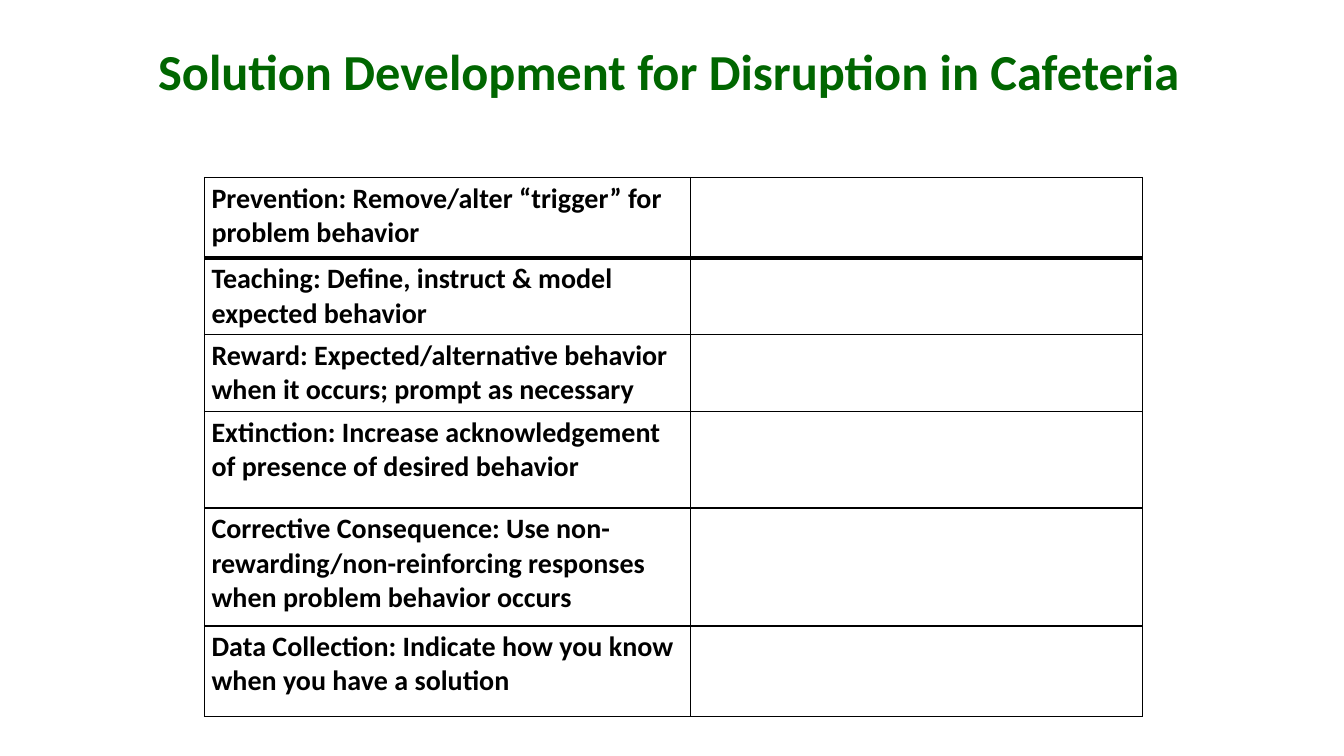
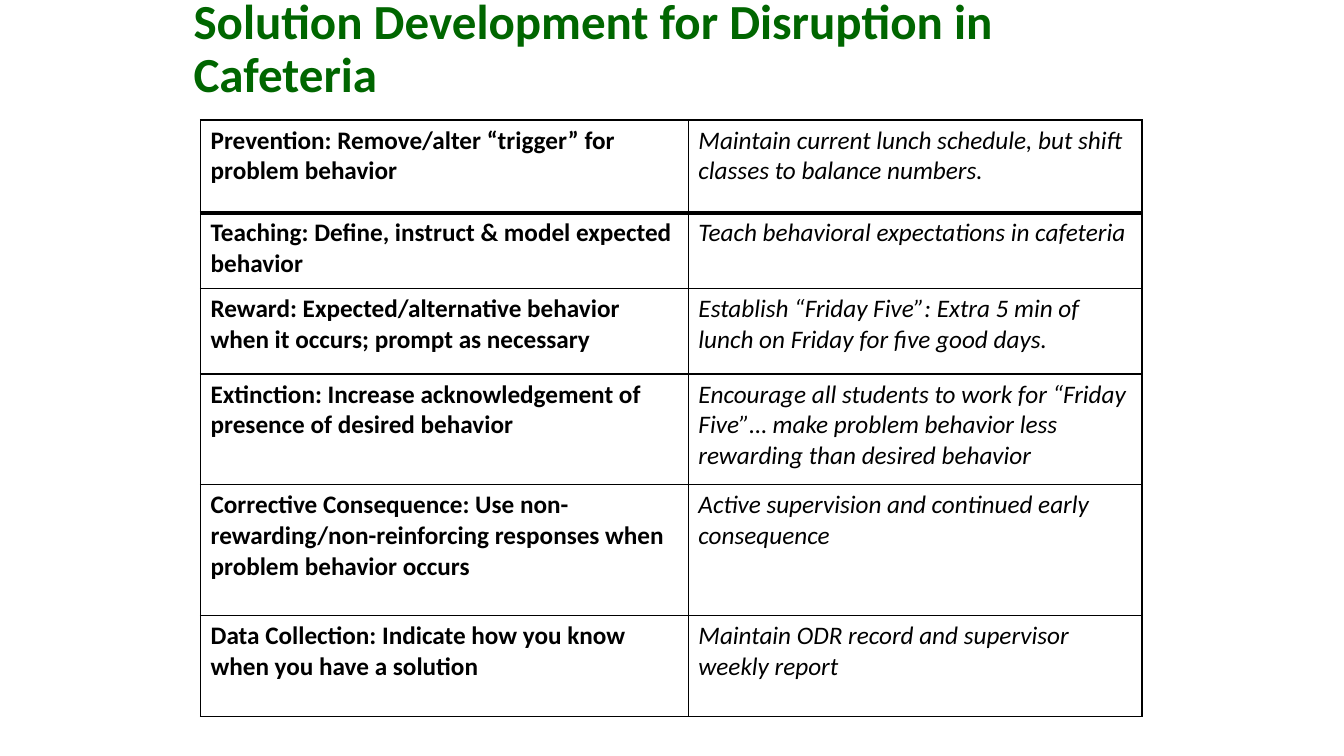
import dataclasses

import pptx
import pptx.dml.color
import pptx.enum.text
import pptx.oxml
import pptx.oxml.ns
import pptx.slide
import pptx.table
import pptx.util

RGB = pptx.dml.color.RGBColor
GREEN = RGB(0x00, 0x66, 0x00)
BLACK = RGB(0x00, 0x00, 0x00)
WHITE = RGB(0xFF, 0xFF, 0xFF)
FONT = "Calibri"
WIDE = pptx.util.Inches(13.33)
HIGH = pptx.util.Inches(7.5)
THIN, THICK = 1, 3  # border widths in points

HEADING = "Solution Development for Disruption in Cafeteria"
STEPS = (
    "Prevention: Remove/alter “trigger” for problem behavior",
    "Teaching: Define, instruct & model expected behavior",
    "Reward: Expected/alternative behavior when it occurs; prompt as necessary",
    "Extinction: Increase acknowledgement of presence of desired behavior",
    "Corrective Consequence: Use non-rewarding/non-reinforcing responses "
    "when problem behavior occurs",
    "Data Collection: Indicate how you know when you have a solution",
)
ANSWERS = (
    "Maintain current lunch schedule, but shift classes to balance numbers.",
    "Teach behavioral expectations in cafeteria",
    "Establish “Friday Five”: Extra 5 min of lunch on Friday for five good days.",
    "Encourage all students to work for “Friday Five”… make problem behavior "
    "less rewarding than desired behavior",
    "Active supervision and continued early consequence",
    "Maintain ODR record and supervisor weekly report",
)


@dataclasses.dataclass(frozen=True)
class Page:
    """Places are percentages of the slide's width and height."""
    title: tuple[float, float, float, float]
    title_size: float
    corner: tuple[float, float]
    cols: tuple[float, ...]
    rows: tuple[float, ...]
    size: float
    inset: tuple[float, float]  # side and top margins of a cell, in inches
    answers: tuple[str, ...]


PAGES = (
    Page((11.02, 4.8, 78.38, 10), 36, (15.22, 23.47), (36.15, 33.67),
         (10.67, 9.87, 9.87, 12.8, 15.6, 12), 20, (0.07, 0.04),
         ("",) * len(STEPS)),
    Page((13.65, 0, 73.88, 13.33), 35, (14.92, 15.87), (36.3, 33.75),
         (12.27, 10, 11.33, 14.67, 17.33, 13.33), 18, (0.1, 0.05), ANSWERS),
)


def across(share: float) -> int:
    return round(WIDE * share / 100)


def down(share: float) -> int:
    return round(HIGH * share / 100)


def assign(target: object, values: dict[str, object]) -> None:
    for name, value in values.items():
        setattr(target, name, value)


def style(font: object, size: float, color: RGB, **extra: bool) -> None:
    assign(font, {"name": FONT, "size": pptx.util.Pt(size), **extra})
    font.color.rgb = color


def border(cell: object, widths: dict[str, int]) -> None:
    props = cell._tc.get_or_add_tcPr()
    for side, width in widths.items():
        props.append(pptx.oxml.parse_xml(
            f'<a:ln{side} {pptx.oxml.ns.nsdecls("a")} w="{pptx.util.Pt(width)}">'
            f'<a:solidFill><a:srgbClr val="{BLACK}"/></a:solidFill></a:ln{side}>'))


def head(slide: pptx.slide.Slide, page: Page) -> None:
    left, top, width, height = page.title
    title = slide.shapes.title
    assign(title, {"left": across(left), "top": down(top),
                   "width": across(width), "height": down(height)})
    frame = title.text_frame
    assign(frame, {"text": HEADING, "word_wrap": True,
                   "auto_size": pptx.enum.text.MSO_AUTO_SIZE.NONE,
                   "vertical_anchor": pptx.enum.text.MSO_ANCHOR.MIDDLE})
    para = frame.paragraphs[0]
    assign(para, {"alignment": pptx.enum.text.PP_ALIGN.LEFT, "line_spacing": 0.9})
    style(para.runs[0].font, page.title_size, GREEN, bold=True)


def fill(cell: object, text: str, page: Page, answer: bool) -> None:
    side, edge = (pptx.util.Inches(inset) for inset in page.inset)
    assign(cell, {"margin_left": side, "margin_right": side,
                  "margin_top": edge, "margin_bottom": edge, "text": text})
    style(cell.text_frame.paragraphs[0].font, page.size, BLACK)
    for run in cell.text_frame.paragraphs[0].runs:
        style(run.font, page.size, BLACK, bold=not answer, italic=answer)


def grid(slide: pptx.slide.Slide, page: Page) -> None:
    left, top = page.corner
    table: pptx.table.Table = slide.shapes.add_table(
        len(page.rows), len(page.cols), across(left), down(top),
        across(sum(page.cols)), down(sum(page.rows))).table
    assign(table, {"first_row": False, "horz_banding": False})
    for col, width in zip(table.columns, page.cols):
        col.width = across(width)
    for row, height in zip(table.rows, page.rows):
        row.height = down(height)

    # A thick rule parts the first row from the rest
    for r, texts in enumerate(zip(STEPS, page.answers)):
        for c, text in enumerate(texts):
            cell = table.cell(r, c)
            fill(cell, text, page, answer=c == 1)
            border(cell, {"L": THIN, "R": THIN,
                          "T": THICK if r == 1 else THIN,
                          "B": THICK if r == 0 else THIN})
            cell.fill.solid()
            cell.fill.fore_color.rgb = WHITE


def main() -> None:
    deck = pptx.Presentation()
    assign(deck, {"slide_width": WIDE, "slide_height": HIGH})
    for page in PAGES:
        slide = deck.slides.add_slide(deck.slide_layouts[5])  # title only
        head(slide, page)
        grid(slide, page)
    deck.save("out.pptx")


if __name__ == "__main__":
    main()
